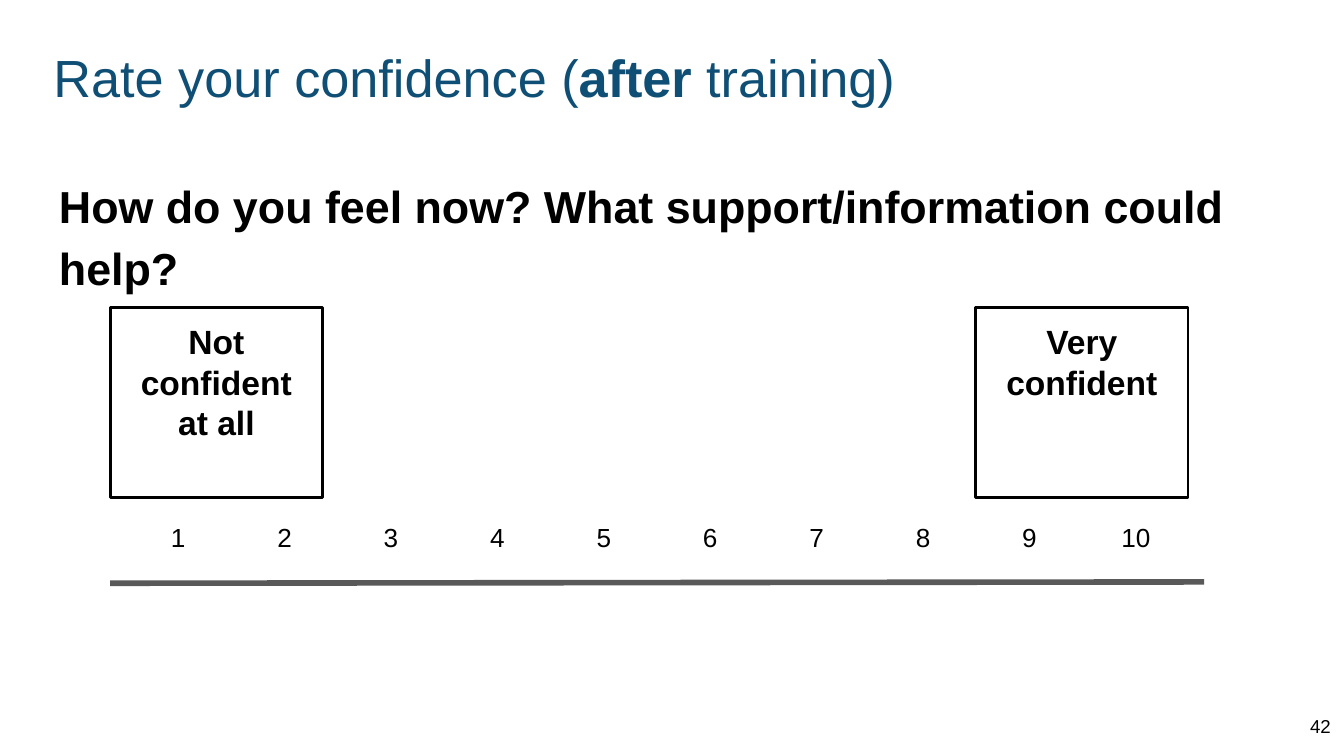
"""Build the slide that asks for a confidence rating after training."""
from dataclasses import dataclass
from typing import Any

from lxml.etree import SubElement
from pptx import Presentation
from pptx.dml.color import RGBColor
from pptx.enum.shapes import MSO_CONNECTOR, MSO_SHAPE
from pptx.enum.text import MSO_ANCHOR, PP_ALIGN
from pptx.oxml.ns import qn
from pptx.util import Inches, Pt

COLOURS = {"title": "104F75", "text": "000000", "scale": "595959"}
PAGE_WIDTH = Inches(10)
PAGE_HEIGHT = PAGE_WIDTH * 9 // 16
MARGIN = Inches(0.1)
MARGIN_FORMAT = {
    "margin_left": MARGIN,
    "margin_top": MARGIN,
    "margin_right": MARGIN,
    "margin_bottom": MARGIN,
}


@dataclass(frozen=True)
class Span:
    """A stretch of text in one weight."""
    text: str
    bold: bool = False


@dataclass(frozen=True)
class TextBlock:
    """A placed piece of text, with an outline if it is framed."""
    spans: tuple[Span, ...]
    left: float
    top: float
    width: float
    height: float
    size: int
    colour: str = "text"
    align: PP_ALIGN = PP_ALIGN.LEFT
    anchor: MSO_ANCHOR = MSO_ANCHOR.TOP
    line_spacing: float = 1.0
    framed: bool = False


def colour(name: str) -> RGBColor:
    """Return a named colour."""
    return RGBColor.from_string(COLOURS[name])


def apply(target: Any, values: dict[str, Any]) -> None:
    """Set each attribute of the target from the format values."""
    for name, value in values.items():
        setattr(target, name, value)


def write_spans(para: Any, spans: tuple[Span, ...], size: int, colour_name: str) -> None:
    """Add the spans to a paragraph."""
    for span in spans:
        run = para.add_run()
        run.text = span.text
        apply(run.font, {"name": "Arial", "size": Pt(size), "bold": span.bold})
        run.font.color.rgb = colour(colour_name)


def draw_block(page: Any, block: TextBlock) -> None:
    """Draw a text box or a framed rectangle."""
    place = [Inches(n) for n in (block.left, block.top, block.width, block.height)]
    if block.framed:
        box = page.shapes.add_shape(MSO_SHAPE.RECTANGLE, *place)
        box.shadow.inherit = False
        box.fill.background()
        box.line.color.rgb = colour("text")
        box.line.width = Pt(1.5)
    else:
        box = page.shapes.add_textbox(*place)
    frame_format = {"word_wrap": True, "vertical_anchor": block.anchor}
    apply(box.text_frame, MARGIN_FORMAT | frame_format)
    para = box.text_frame.paragraphs[0]
    apply(para, {"alignment": block.align, "line_spacing": block.line_spacing})
    write_spans(para, block.spans, block.size, block.colour)


def draw_scale_line(page: Any) -> None:
    """Draw the line under the rating numbers."""
    ends = [Inches(n) for n in (0.82, 4.34, 8.96, 4.33)]
    line = page.shapes.add_connector(MSO_CONNECTOR.STRAIGHT, *ends)
    line.line.color.rgb = colour("scale")
    line.line.width = Pt(3)
    SubElement(line.element.spPr, qn("a:effectLst"))


def draw_ratings(page: Any, count: int) -> None:
    """Draw a one-row table of the rating numbers."""
    place = [Inches(n) for n in (0.93, 3.8, 7.92, 0.42)]
    table = page.shapes.add_table(1, count, *place).table
    apply(table, {"first_row": False, "horz_banding": False})
    for number, cell in enumerate(table.iter_cells(), start=1):
        cell.fill.background()
        apply(cell, MARGIN_FORMAT)
        para = cell.text_frame.paragraphs[0]
        para.alignment = PP_ALIGN.CENTER
        write_spans(para, (Span(str(number)),), 14, "text")


def end_box(text: str, left: float) -> TextBlock:
    """Describe the framed label at one end of the scale."""
    return TextBlock((Span(text, True),), left, 2.29, 1.58, 1.41, 18,
                     align=PP_ALIGN.CENTER, framed=True)


TITLE = TextBlock(
    (Span("Rate your confidence ("), Span("after", True), Span(" training)")),
    0.3, 0.24, 9.36, 0.63, 28, colour="title",
)
QUESTION = TextBlock(
    (Span("How do you feel now? What support/information could help?", True),),
    0.34, 1.17, 9.28, 3.83, 24, line_spacing=1.15,
)
PAGE_NUMBER = TextBlock(
    (Span("42"),), 9.4, 5.19, 0.6, 0.43, 10,
    align=PP_ALIGN.RIGHT, anchor=MSO_ANCHOR.MIDDLE,
)
END_BOXES = (end_box("Not confident at all", 0.82), end_box("Very confident", 7.26))


def main() -> None:
    """Build and save the deck."""
    deck = Presentation()
    apply(deck, {"slide_width": PAGE_WIDTH, "slide_height": PAGE_HEIGHT})
    page = deck.slides.add_slide(deck.slide_layouts[6])
    for block in (TITLE, QUESTION):
        draw_block(page, block)
    draw_scale_line(page)
    for block in END_BOXES:
        draw_block(page, block)
    draw_ratings(page, 10)
    draw_block(page, PAGE_NUMBER)
    deck.save("out.pptx")


if __name__ == "__main__":
    main()
